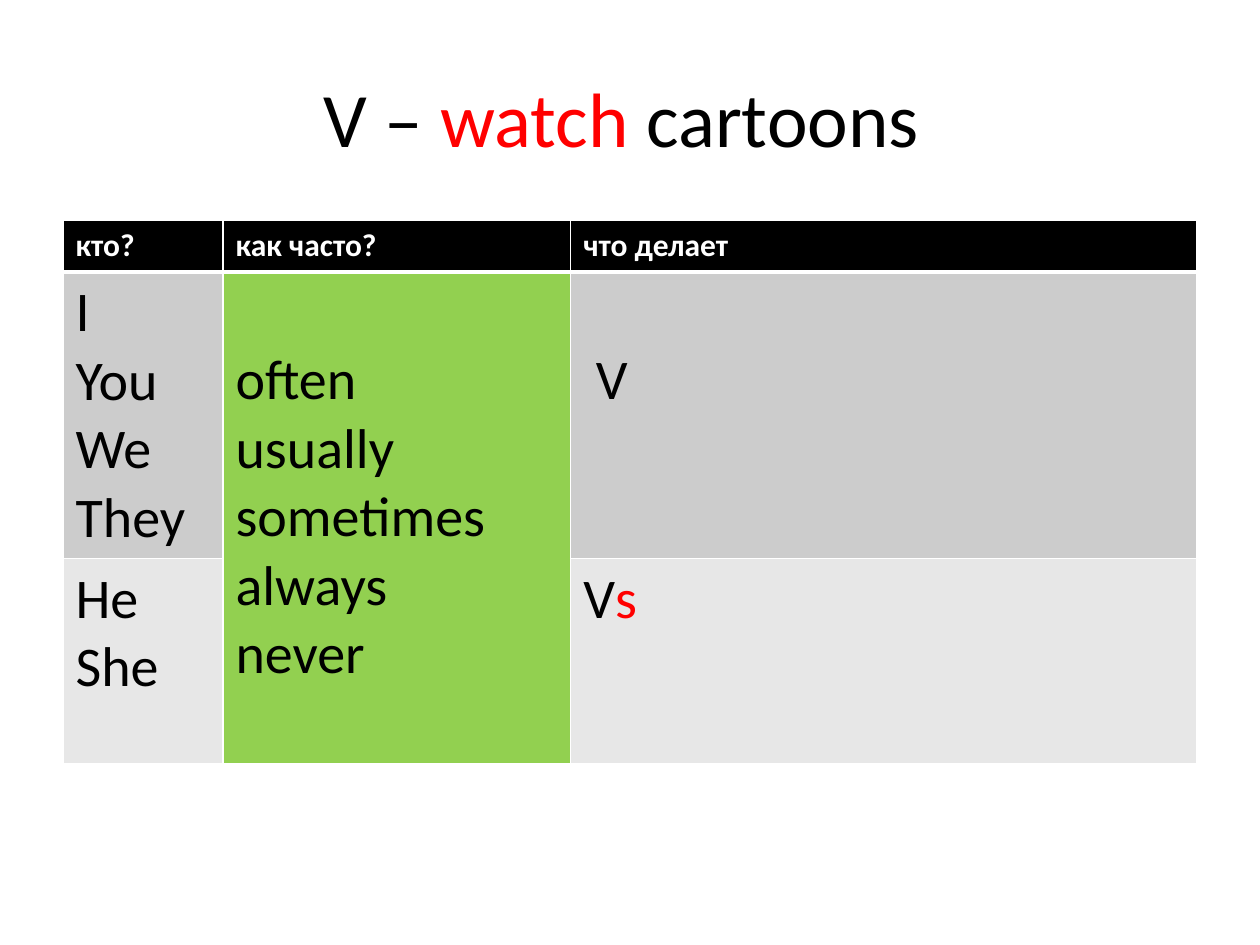
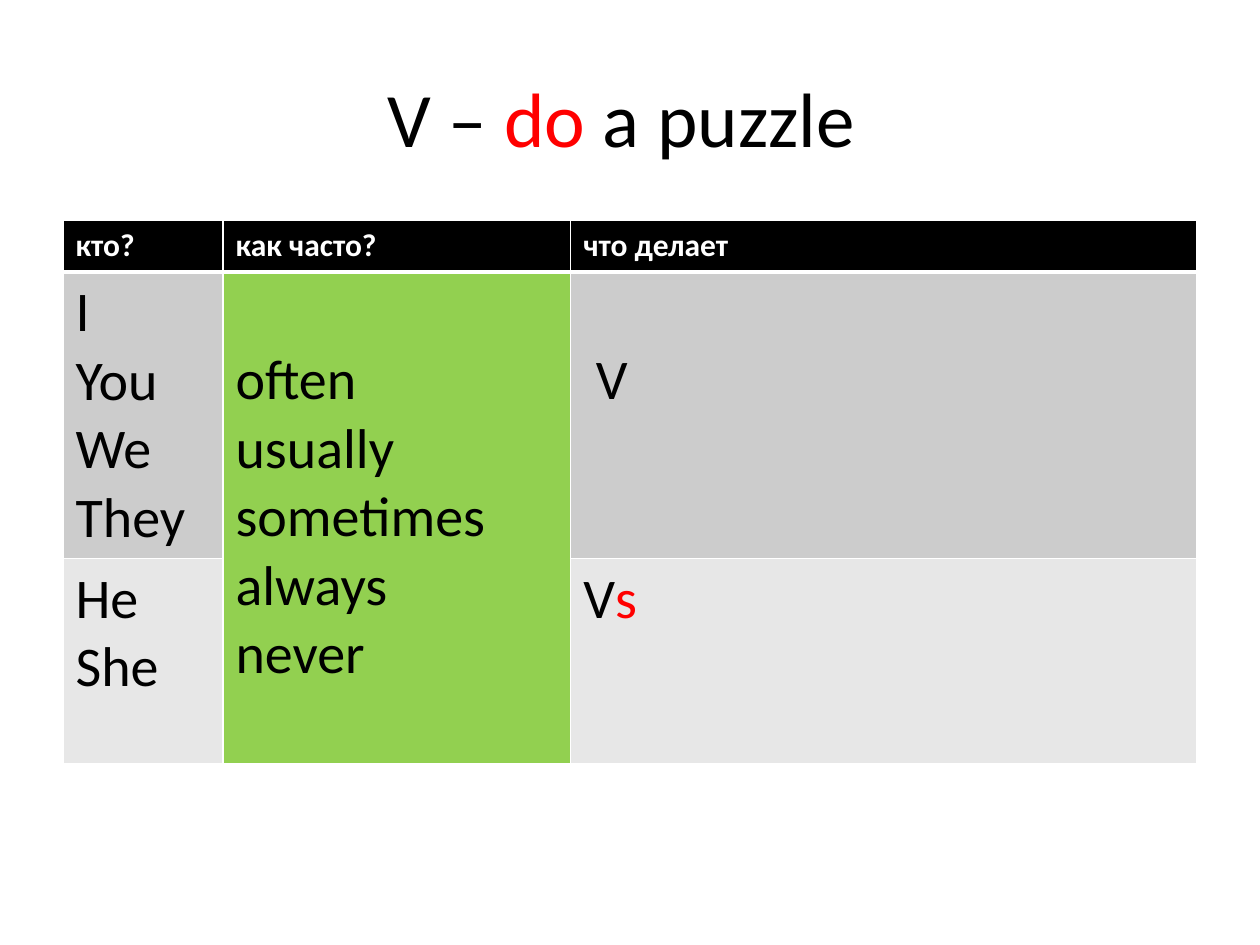
from lxml.etree import SubElement
from pptx import Presentation
from pptx.dml.color import RGBColor
from pptx.enum.text import MSO_ANCHOR, PP_ALIGN
from pptx.oxml import parse_xml
from pptx.oxml.ns import nsdecls, qn
from pptx.util import Inches, Pt

FONT = "Calibri"
HUES = {"ink": "000000", "paper": "FFFFFF", "mark": "FF0000",
        "upper": "CCCCCC", "lower": "E7E7E7", "often": "92D050"}
WIDE, HIGH = Inches(10), Inches(7.5)
EDGE = 0.05                      # side margin, share of the slide's width
COLS = (1.27, 2.76, 4.97)        # inches
ROWS = (0.41, 2.26, 1.63)
LINE = 0.54                      # height of one 32 pt line, inches

# Asterisks enclose the words shown in red.
TITLES = ("V – *watch *cartoons ", "V –* do *a puzzle ")
HEADS = ("кто?", "как часто?", "что делает")
# Row, column, lines, fill, lines left free above the text
CELLS = (
    (1, 0, ("I", "You", "We", "They"), "upper", 0),
    (1, 1, ("often", "usually", "sometimes", "always", "never"), "often", 1),
    (1, 2, (" V",), "upper", 1),
    (2, 0, ("He", "She"), "lower", 0),
    (2, 2, ("V*s*",), "lower", 0),
)


def hue(name):
    return RGBColor.from_string(HUES[name])


def write(para, text, size, color="ink", bold=False):
    """Fill a paragraph, with the words between asterisks in red."""
    for i, part in enumerate(text.split("*")):
        if part:
            run = para.add_run()
            run.text = part
            font = run.font
            font.name, font.size, font.bold = FONT, Pt(size), bold
            font.color.rgb = hue("mark" if i % 2 else color)


def border(cell, top, base):
    """Draw white lines, in points, on the four sides of a cell."""
    props = cell._tc.get_or_add_tcPr()
    sides = (("lnL", 1), ("lnR", 1), ("lnT", top), ("lnB", base))
    for i, (side, width) in enumerate(sides):
        line = parse_xml(f'<a:{side} {nsdecls("a")} w="{Pt(width)}"/>')
        fill = SubElement(line, qn("a:solidFill"))
        SubElement(fill, qn("a:srgbClr"), val=HUES["paper"])
        props.insert(i, line)


def paint(cell, name):
    cell.fill.solid()
    cell.fill.fore_color.rgb = hue(name)


def add_title(slide, text):
    title = slide.shapes.title
    title.left, title.top = int(WIDE * EDGE), int(HIGH * 0.04)
    title.width, title.height = int(WIDE * (1 - 2 * EDGE)), Inches(1.25)
    frame = title.text_frame
    frame.vertical_anchor = MSO_ANCHOR.MIDDLE
    para = frame.paragraphs[0]
    para.alignment = PP_ALIGN.CENTER
    write(para, text, 44)


def add_grid(slide):
    grid = slide.shapes.add_table(
        len(ROWS), len(COLS), int(WIDE * EDGE), Inches(1.75),
        Inches(sum(COLS)), Inches(sum(ROWS))).table
    for col, width in zip(grid.columns, COLS):
        col.width = Inches(width)
    for row, height in zip(grid.rows, ROWS):
        row.height = Inches(height)
    grid.cell(1, 1).merge(grid.cell(2, 1))

    # Header row
    for c, head in enumerate(HEADS):
        cell = grid.cell(0, c)
        paint(cell, "ink")
        write(cell.text_frame.paragraphs[0], head, 18, "paper", True)

    # Pronouns, adverbs and verb forms
    for r, c, lines, fill, skip in CELLS:
        cell = grid.cell(r, c)
        paint(cell, fill)
        cell.margin_top = Inches(0.05 + skip * LINE)
        frame = cell.text_frame
        for i, line in enumerate(lines):
            para = frame.add_paragraph() if i else frame.paragraphs[0]
            write(para, line, 32)
    paint(grid.cell(2, 1), "often")

    # Rules, thicker below the header
    for r in range(len(ROWS)):
        for c in range(len(COLS)):
            border(grid.cell(r, c), 3 if r == 1 else 1, 3 if r == 0 else 1)


def main():
    deck = Presentation()
    deck.slide_width, deck.slide_height = WIDE, HIGH
    for text in TITLES:
        slide = deck.slides.add_slide(deck.slide_layouts[5])
        add_title(slide, text)
        add_grid(slide)
    deck.save("out.pptx")


if __name__ == "__main__":
    main()
